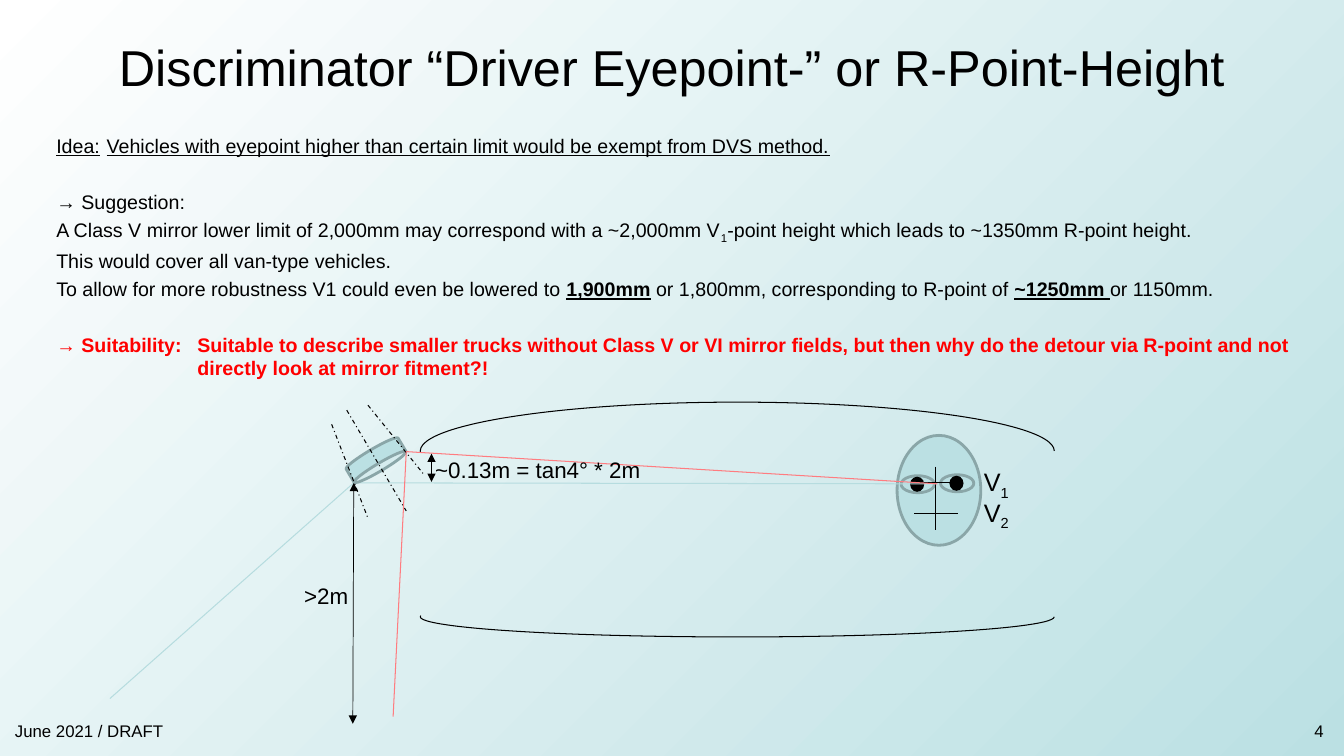
from dataclasses import dataclass

from lxml import etree
from pptx import Presentation
from pptx.dml.color import RGBColor
from pptx.enum.dml import MSO_LINE
from pptx.enum.shapes import MSO_CONNECTOR, MSO_SHAPE
from pptx.enum.text import MSO_ANCHOR, PP_ALIGN
from pptx.oxml.ns import qn
from pptx.util import Pt

STRAIGHT = MSO_CONNECTOR.STRAIGHT
DASH_DOT = MSO_LINE.DASH_DOT
OVAL, ARC, CAN = MSO_SHAPE.OVAL, MSO_SHAPE.ARC, MSO_SHAPE.CAN
TOP, MIDDLE = MSO_ANCHOR.TOP, MSO_ANCHOR.MIDDLE
LEFT, CENTER, RIGHT = PP_ALIGN.LEFT, PP_ALIGN.CENTER, PP_ALIGN.RIGHT

FONT = "Arial"
COLORS = {
    "white": "FFFFFF",
    "black": "000000",
    "teal": "BBE0E3",
    "outline": "8AA6A8",
    "lower_ray": "B6DCDF",
    "upper_ray": "FF7C80",
    "red": "FF0000",
}
LINE_GAP, BLOCK_GAP = 3.3, 22.8


@dataclass
class Box:
    left: float
    top: float
    width: float
    height: float

    def inner(self, x, y, width, height):
        return Box(self.left + x, self.top + y, width, height)

    def lengths(self):
        return Pt(self.left), Pt(self.top), Pt(self.width), Pt(self.height)


def rgb(name):
    return RGBColor.from_string(COLORS[name])


def add_run(paragraph, text, size, color="black", bold=False, underline=False, subscript=False):
    run = paragraph.add_run()
    run.text = text
    font = run.font
    font.name, font.size, font.bold, font.underline = FONT, Pt(size), bold, underline
    font.color.rgb = rgb(color)
    if subscript:
        run._r.get_or_add_rPr().set("baseline", "-25000")


def add_text_frame(slide, box, wrap=True, anchor=TOP):
    frame = slide.shapes.add_textbox(*box.lengths()).text_frame
    frame.word_wrap = wrap
    frame.vertical_anchor = anchor
    return frame


def add_label(slide, box, text, size, align=LEFT, anchor=TOP, wrap=False, index=None):
    paragraph = add_text_frame(slide, box, wrap, anchor).paragraphs[0]
    paragraph.alignment = align
    add_run(paragraph, text, size)
    if index:
        add_run(paragraph, index, size, subscript=True)


def add_outlined(slide, kind, box, fill=None, line=None, width=2):
    shape = slide.shapes.add_shape(kind, *box.lengths())
    shape.shadow.inherit = False
    if fill:
        shape.fill.solid()
        shape.fill.fore_color.rgb = rgb(fill)
    else:
        shape.fill.background()
    if line:
        shape.line.color.rgb = rgb(line)
        shape.line.width = Pt(width)
    else:
        shape.line.fill.background()
    return shape


def add_line(slide, box, start, end, color="black", width=0.75, dash=None, arrows=False):
    points = [Pt(value) for x, y in (start, end) for value in (box.left + x, box.top + y)]
    connector = slide.shapes.add_connector(STRAIGHT, *points)
    connector.line.color.rgb = rgb(color)
    connector.line.width = Pt(width)
    if dash:
        connector.line.dash_style = dash
    if arrows:
        for end_tag in ("a:headEnd", "a:tailEnd"):
            etree.SubElement(connector.line._ln, qn(end_tag)).set("type", "triangle")
    etree.SubElement(connector._element.spPr, qn("a:effectLst"))


def add_background(slide):
    fill = slide.background.fill
    fill.gradient()
    fill.gradient_angle = 315
    for stop, color in zip(fill.gradient_stops, ("white", "teal")):
        stop.color.rgb = rgb(color)


def add_body(slide, box):
    underlined, strong = {"underline": True}, {"underline": True, "bold": True}
    warning = {"color": "red", "bold": True}
    paragraphs = [
        (0, [("Idea:", underlined), ("\t", {}),
             ("Vehicles with eyepoint higher than certain limit would be exempt from DVS method.",
              underlined)]),
        (BLOCK_GAP, [("→ Suggestion:", {})]),
        (LINE_GAP, [("A Class V mirror lower limit of 2,000mm may correspond with a ~2,000mm V", {}),
                    ("1", {"subscript": True}),
                    ("-point height which leads to ~1350mm R-point height.", {})]),
        (LINE_GAP, [("This would cover all van-type vehicles.", {})]),
        (LINE_GAP, [("To allow for more robustness V1 could even be lowered to ", {}),
                    ("1,900mm", strong),
                    (" or 1,800mm, corresponding to R-point of ", {}),
                    ("~1250mm ", strong), ("or 1150mm.", {})]),
        (BLOCK_GAP, [("→ Suitability:\t", warning),
                     ("Suitable to describe smaller trucks without Class V or VI mirror fields, "
                      "but then why do the detour via R-point and not directly look at mirror "
                      "fitment?!", warning)]),
    ]
    frame = add_text_frame(slide, box)
    for number, (gap, runs) in enumerate(paragraphs):
        paragraph = frame.add_paragraph() if number else frame.paragraphs[0]
        paragraph.space_before = Pt(gap)
        for text, style in runs:
            add_run(paragraph, text, 14, **style)
    # Hanging indent of the closing verdict
    properties = paragraph._p.get_or_add_pPr()
    properties.set("marL", str(Pt(100.8)))
    properties.set("indent", str(-Pt(100.8)))


def add_driver_head(slide, box):
    add_outlined(slide, OVAL, box, "teal", "outline")
    for x, y in ((31, 28.1), (2.9, 28.8)):
        eye = box.inner(x, y, 23.8, 12.2)
        add_outlined(slide, OVAL, eye, "teal", "outline")
        add_outlined(slide, OVAL, eye.inner(6.4, 0.7, 10.1, 10.8), "black")
    # Crosses and labels of the two eyepoints
    for index, drop in (("1", 0), ("2", 21.6)):
        add_line(slide, box, (27.4, 22.4 + drop), (27.4, 45.8 + drop))
        add_line(slide, box, (43.2, 33.9 + drop), (12.2, 33.9 + drop))
        add_label(slide, box.inner(54.9, 18.8 + drop, 33, 28.8), "V", 18, index=index)


def add_cab_outline(slide, box):
    for y, height, flipped in ((0, 69.8, False), (138.9, 28.8, True)):
        arc = add_outlined(slide, ARC, box.inner(0, y, box.width, height), line="black", width=0.75)
        arc.adjustments[0], arc.adjustments[1] = 107.872, 0
        if flipped:
            arc._element.spPr.get_or_add_xfrm().set("flipV", "1")


def add_mirror(slide, box):
    can = add_outlined(slide, CAN, box, "teal", "outline")
    can.adjustments[0] = 0.33
    can.rotation = 149.3
    for start, end in (((0.7, -27.4), (43.2, 44.6)),
                       ((-10.1, -17.3), (15.8, 49.7)),
                       ((15.8, -31), (55.4, 18))):
        add_line(slide, box, start, end, dash=DASH_DOT)


def add_sight_sketch(slide, box):
    eye, mirror_low, mirror_high = (591.6, 59.6), (174.7, 58.9), (212.2, 36.6)
    add_driver_head(slide, box.inner(562.8, 25, 59.8, 78.5))
    add_cab_outline(slide, box.inner(222.2, 1.3, 452.9, 167.7))
    add_line(slide, box, eye, mirror_low, "lower_ray")
    add_mirror(slide, box.inner(169, 34.4, 43.2, 16.6))
    # Rays from the mirror to the ground and to the eye
    add_line(slide, box, mirror_low, (0.5, 213), "lower_ray")
    add_line(slide, box, eye, mirror_high, "upper_ray")
    add_line(slide, box, (202.8, 225.9), mirror_high, "upper_ray")
    # Dimensions
    add_line(slide, box, mirror_low, (174, 231), width=0.5, arrows=True)
    add_label(slide, box.inner(132.2, 126.6, 46.8, 26.6), ">2m", 16)
    add_line(slide, box, (230.2, 38), (230.2, 58.2), width=0.5, arrows=True)
    add_label(slide, box.inner(225.8, 36.6, 163.4, 26.6), "~0.13m = tan4° * 2m", 16)


def add_footer(slide, box):
    add_label(slide, box.inner(0, 0, 121.7, box.height), "June 2021 / DRAFT", 12)
    add_label(slide, box.inner(box.width - 60, 0, 60, box.height), "4", 12, RIGHT, wrap=True)


def main():
    presentation = Presentation()
    presentation.slide_width, presentation.slide_height = Pt(960), Pt(540)
    slide = presentation.slides.add_slide(presentation.slide_layouts[6])
    add_background(slide)
    add_footer(slide, Box(3.6, 511, 949, 21.6))
    add_label(slide, Box(48, 21.6, 864, 51.8), "Discriminator “Driver Eyepoint-” or R-Point-Height",
              36, CENTER, MIDDLE, wrap=True)
    add_body(slide, Box(33.1, 92.2, 910.8, 195.8))
    add_sight_sketch(slide, Box(78, 286, 676, 232))
    presentation.save("out.pptx")


if __name__ == "__main__":
    main()
